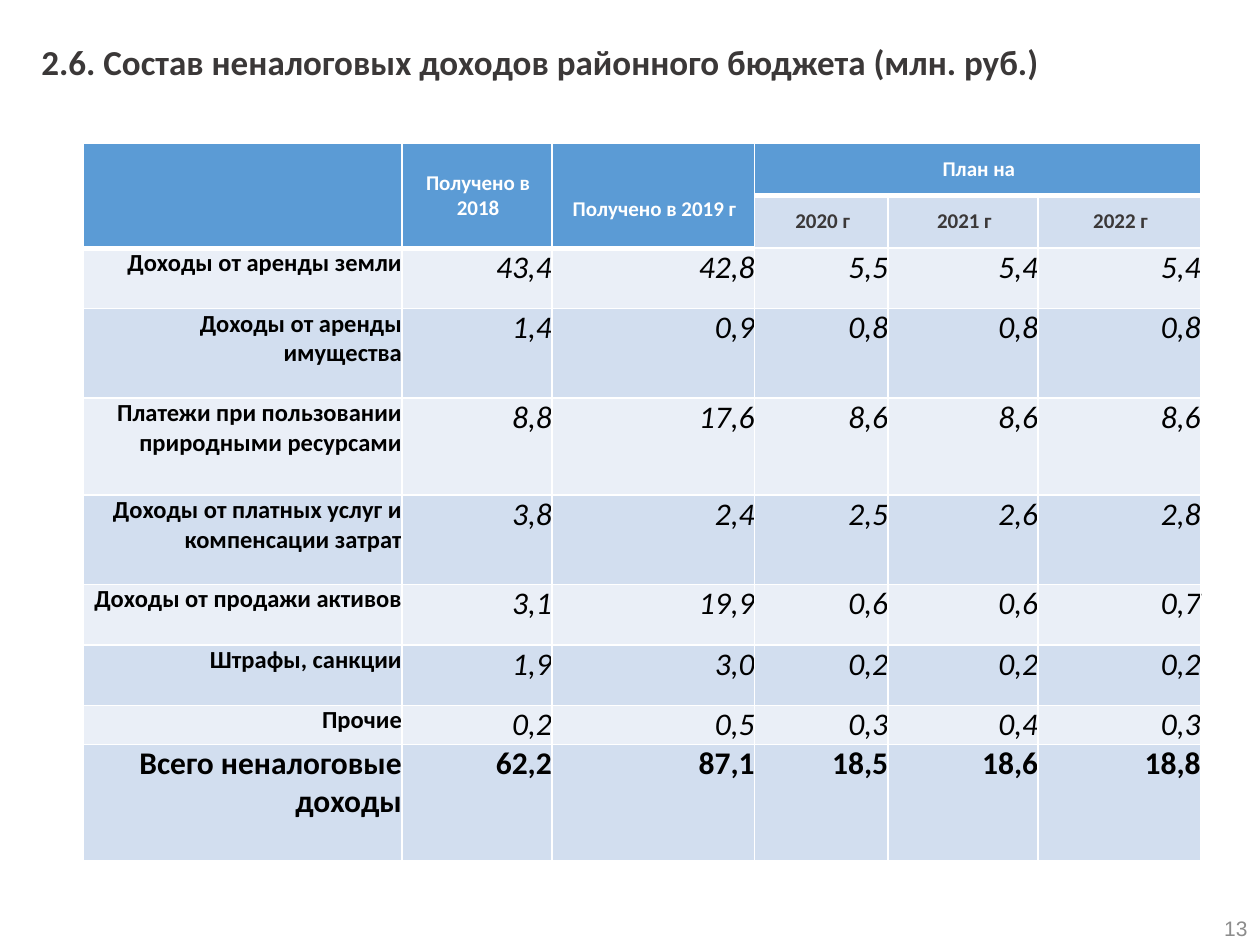
from dataclasses import dataclass
from typing import NamedTuple

from lxml import etree
from pptx import Presentation
from pptx import util as u
from pptx.dml.color import RGBColor
from pptx.enum import text as t
from pptx.oxml.ns import qn

WIDE, HIGH = 10, 7.5


@dataclass(frozen=True)
class Theme:
    font: str = "Calibri"
    plain: str = "Arial"
    dark: str = "3B3838"
    black: str = "000000"
    white: str = "FFFFFF"
    grey: str = "8C8C8C"
    head: str = "5B9BD5"
    bands: tuple = ("EAEFF7", "D2DEEF")
    title: int = 20
    large: int = 18
    label: int = 14
    small: int = 12


class Box(NamedTuple):
    """Place and size as percent of the slide."""
    x: float
    y: float
    w: float
    h: float

    def emu(self) -> list:
        return [u.Inches(part * side / 100)
                for part, side in zip(self, (WIDE, HIGH, WIDE, HIGH))]


@dataclass(frozen=True)
class Income:
    name: str
    sums: str
    total: bool = False


THEME = Theme()
LEFT, MID, RIGHT = t.PP_ALIGN.LEFT, t.PP_ALIGN.CENTER, t.PP_ALIGN.RIGHT

# Table grid, in inches
COLS = (2.53, 1.19, 1.61, 1.06, 1.19, 1.29)
ROWS = (0.41, 0.42, 0.48, 0.71, 0.77, 0.71, 0.48, 0.48, 0.31, 0.92)
YEARS = ("2020 г", "2021 г", "2022 г")
ITEMS = (
    Income("Доходы от аренды земли", "43,4 42,8 5,5 5,4 5,4"),
    Income("Доходы от аренды имущества", "1,4 0,9 0,8 0,8 0,8"),
    Income("Платежи при пользовании природными ресурсами",
           "8,8 17,6 8,6 8,6 8,6"),
    Income("Доходы от платных услуг и компенсации затрат",
           "3,8 2,4 2,5 2,6 2,8"),
    Income("Доходы от продажи активов", "3,1 19,9 0,6 0,6 0,7"),
    Income("Штрафы, санкции", "1,9 3,0 0,2 0,2 0,2"),
    Income("Прочие", "0,2 0,5 0,3 0,4 0,3"),
    Income("Всего неналоговые доходы", "62,2 87,1 18,5 18,6 18,8", True),
)


def write(frame, words: str, *, size: int, color: str, font: str = THEME.font,
          bold: bool = False, slant: bool = False, align=LEFT,
          line: float = 1.0) -> None:
    par = frame.paragraphs[0]
    par.alignment, par.line_spacing = align, line
    run = par.add_run()
    run.text = words
    face = run.font
    face.name, face.size = font, u.Pt(size)
    face.bold, face.italic = bold, slant
    face.color.rgb = RGBColor.from_string(color)


def add_text(slide, box: Box, words: str, *, anchor=t.MSO_ANCHOR.TOP,
             **style) -> None:
    frame = slide.shapes.add_textbox(*box.emu()).text_frame
    frame.word_wrap = True
    frame.vertical_anchor = anchor
    write(frame, words, **style)


def is_head(row: int, col: int) -> bool:
    return row == 0 or (row == 1 and col < 3)


def edge(cell, top: int, bottom: int) -> None:
    """Draw white borders; they must precede the fill in the cell."""
    props = cell._tc.get_or_add_tcPr()
    for side, width in zip("LRTB", (1, 1, top, bottom)):
        line = etree.SubElement(props, qn(f"a:ln{side}"), w=str(u.Pt(width)))
        fill = etree.SubElement(line, qn("a:solidFill"))
        etree.SubElement(fill, qn("a:srgbClr"), val=THEME.white)


def dress(grid) -> None:
    """Set borders, fill and margins of every cell."""
    for row in range(len(ROWS)):
        for col in range(len(COLS)):
            cell = grid.cell(row, col)
            head = is_head(row, col)
            above = row > 0 and is_head(row - 1, col) and not (head and row)
            edge(cell, 3 if above else 1, 3 if head else 1)
            cell.fill.solid()
            cell.fill.fore_color.rgb = RGBColor.from_string(
                THEME.head if head else THEME.bands[row % 2])
            cell.margin_left = cell.margin_right = 0
            cell.margin_top = cell.margin_bottom = 0


def add_head(grid) -> None:
    def put(row: int, col: int, words: str, color: str = THEME.white):
        cell = grid.cell(row, col)
        cell.vertical_anchor = t.MSO_ANCHOR.MIDDLE
        cell.margin_left = u.Inches(0.02)
        write(cell.text_frame, words, size=THEME.small, color=color,
              bold=True, align=MID)
        return cell

    for col in range(3):
        grid.cell(0, col).merge(grid.cell(1, col))
    grid.cell(0, 3).merge(grid.cell(0, 5))
    put(0, 1, "Получено в 2018")
    put(0, 2, "Получено в 2019 г").margin_top = u.Inches(0.22)
    put(0, 3, "План на")
    for col, year in enumerate(YEARS, 3):
        put(1, col, year, THEME.dark)


def add_item(grid, row: int, item: Income) -> None:
    label = grid.cell(row, 0)
    label.margin_left = u.Inches(0.03)
    write(label.text_frame, item.name, color=THEME.black, bold=True,
          size=THEME.large if item.total else THEME.label, align=RIGHT)
    for col, value in enumerate(item.sums.split(), 1):
        write(grid.cell(row, col).text_frame, value, size=THEME.large,
              color=THEME.black, bold=item.total, slant=not item.total,
              align=RIGHT)


def add_grid(slide) -> None:
    grid = slide.shapes.add_table(
        len(ROWS), len(COLS), u.Inches(0.66), u.Inches(1.14),
        u.Inches(sum(COLS)), u.Inches(sum(ROWS))).table
    for col, width in zip(grid.columns, COLS):
        col.width = u.Inches(width)
    for row, height in zip(grid.rows, ROWS):
        row.height = u.Inches(height)
    dress(grid)
    add_head(grid)
    for row, item in enumerate(ITEMS, 2):
        add_item(grid, row, item)


def main() -> None:
    deck = Presentation()
    deck.slide_width, deck.slide_height = u.Inches(WIDE), u.Inches(HIGH)
    slide = deck.slides.add_slide(deck.slide_layouts[6])

    # Title
    add_text(slide, Box(2.3, 4.13, 96.1, 88.27),
             "2.6. Состав неналоговых доходов районного бюджета (млн. руб.)",
             size=THEME.title, color=THEME.dark, bold=True, line=0.9)
    # Income table
    add_grid(slide)
    # Page number
    add_text(slide, Box(76.7, 94.8, 23.3, 6.93), "13", size=THEME.small,
             color=THEME.grey, font=THEME.plain, align=RIGHT,
             anchor=t.MSO_ANCHOR.MIDDLE)
    deck.save("out.pptx")


if __name__ == "__main__":
    main()
